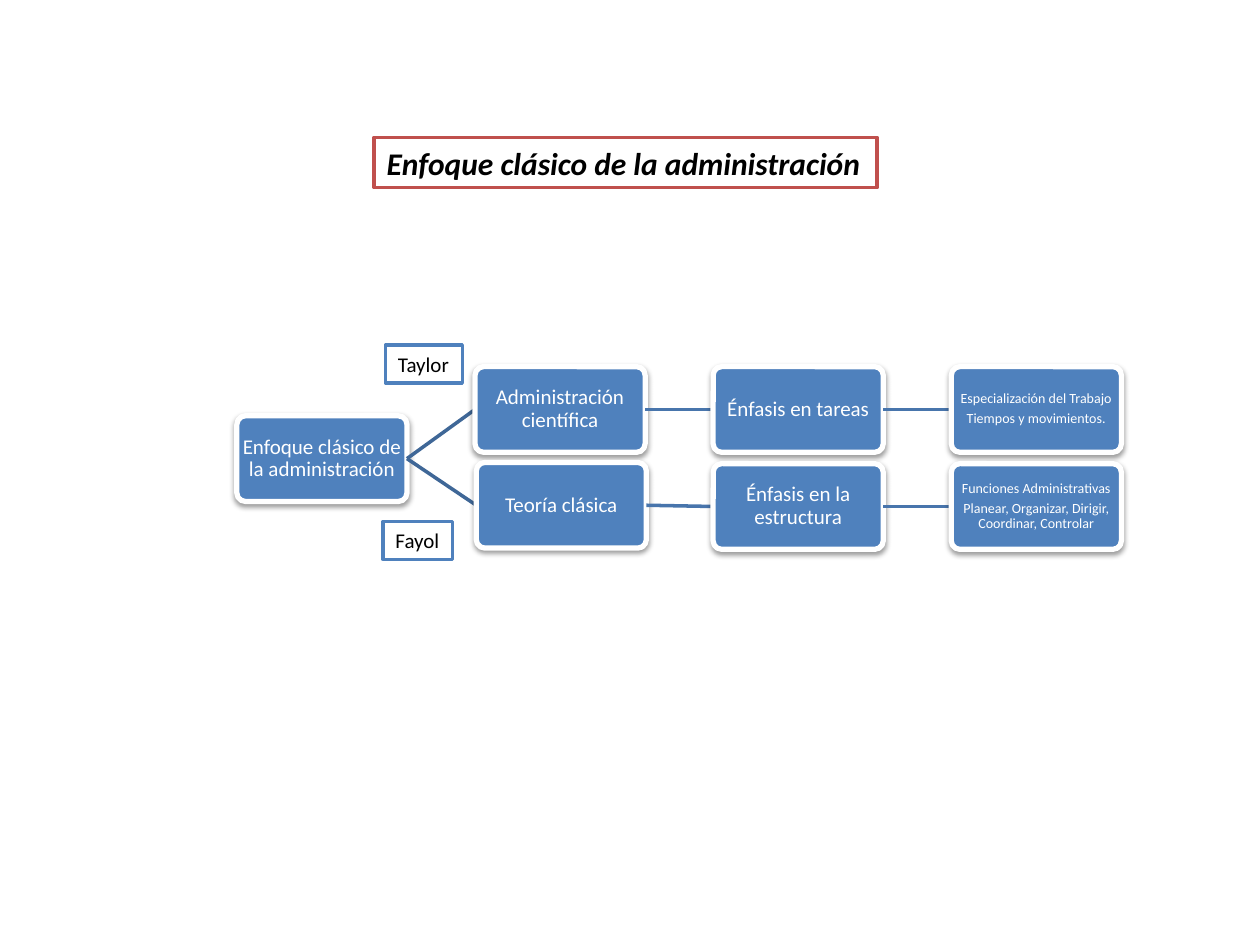
from dataclasses import dataclass

from pptx import Presentation
from pptx.dml.color import RGBColor as Rgb
from pptx.enum.shapes import MSO_CONNECTOR as Connector, MSO_SHAPE as Shape
from pptx.enum.text import MSO_ANCHOR as Anchor, MSO_AUTO_SIZE as AutoSize, PP_ALIGN as Align
from pptx.oxml import parse_xml
from pptx.oxml.ns import nsdecls
from pptx.shapes.autoshape import Shape as AutoShape
from pptx.slide import Slide
from pptx.util import Inches, Pt


@dataclass(frozen=True)
class Theme:
    font: str = "Calibri"
    blue: Rgb = Rgb(0x4F, 0x81, 0xBD)
    red: Rgb = Rgb(0xC0, 0x50, 0x4D)
    white: Rgb = Rgb(0xFF, 0xFF, 0xFF)
    black: Rgb = Rgb(0, 0, 0)
    branch: Rgb = Rgb(0x3F, 0x67, 0x97)
    link: Rgb = Rgb(0x48, 0x75, 0xAC)
    title_size: int = 18
    body_size: int = 12
    detail_size: int = 8
    line_width: int = 2
    border_width: int = 3


@dataclass(frozen=True)
class Node:
    text: str
    column: int
    top: float
    nudge: float = 0
    size: int = Theme.body_size


@dataclass(frozen=True)
class Label:
    text: str
    left: float
    top: float
    width: float
    height: float = 0.3
    line: Rgb = Theme.blue
    size: int = Theme.body_size
    emphasis: bool = False


THEME = Theme()
FIRST_LEFT, COLUMN_STEP = 1.88, 1.89
NODE_WIDTH, NODE_HEIGHT = 1.35, 0.68

ROOT = Node("Enfoque clásico de la administración", 0, 3.3)
BRANCHES = [
    [
        Node("Administración científica", 1, 2.91),
        Node("Énfasis en tareas", 2, 2.91),
        Node("Especialización del Trabajo\nTiempos y movimientos.", 3, 2.91,
             size=THEME.detail_size),
    ],
    [
        Node("Teoría clásica", 1, 3.67, nudge=0.01),
        Node("Énfasis en la estructura", 2, 3.68),
        Node("Funciones Administrativas\nPlanear, Organizar, Dirigir, Coordinar, Controlar",
             3, 3.68, size=THEME.detail_size),
    ],
]
LABELS = [
    Label("Taylor", 3.06, 2.74, 0.61),
    Label("Fayol", 3.04, 4.14, 0.55),
    Label("Enfoque clásico de la administración", 2.97, 1.09, 3.99, 0.4,
          THEME.red, THEME.title_size, True),
]


def paint(box: AutoShape, fill: Rgb, line: Rgb, width: int) -> None:
    box.shadow.inherit = False
    box.fill.solid()
    box.fill.fore_color.rgb = fill
    box.line.color.rgb = line
    box.line.width = Pt(width)


def write(box: AutoShape, text: str, size: int, color: Rgb, align: Align) -> None:
    box.text_frame.text = text
    for para in box.text_frame.paragraphs:
        para.alignment = align
        for span in para.runs:
            span.font.name = THEME.font
            span.font.size = Pt(size)
            span.font.color.rgb = color


def add_soft_shadow(box: AutoShape) -> None:
    effects = box._element.spPr.find("{*}effectLst")
    effects.append(parse_xml(
        f'<a:outerShdw {nsdecls("a")} blurRad="{Pt(3.1)}" dist="{Pt(1.6)}" '
        'dir="5400000" rotWithShape="0"><a:srgbClr val="000000">'
        '<a:alpha val="38000"/></a:srgbClr></a:outerShdw>'
    ))


def draw_node(page: Slide, node: Node) -> AutoShape:
    left = FIRST_LEFT + node.column * COLUMN_STEP + node.nudge
    box = page.shapes.add_shape(
        Shape.ROUNDED_RECTANGLE, Inches(left), Inches(node.top),
        Inches(NODE_WIDTH), Inches(NODE_HEIGHT))
    box.adjustments[0] = 0.1
    paint(box, THEME.blue, THEME.white, THEME.border_width)
    add_soft_shadow(box)
    frame = box.text_frame
    frame.word_wrap = True
    frame.vertical_anchor = Anchor.MIDDLE
    frame.margin_left = frame.margin_right = Inches(0.01)
    frame.margin_top = frame.margin_bottom = Inches(0.01)
    write(box, node.text, node.size, THEME.white, Align.CENTER)
    for para in frame.paragraphs:
        para.line_spacing = 0.9
        para.space_after = Pt(0.35 * node.size)
    return box


def join(page: Slide, parent: AutoShape, child: AutoShape, color: Rgb) -> None:
    line = page.shapes.add_connector(Connector.STRAIGHT, 0, 0, 0, 0)
    line.begin_connect(parent, 3)
    line.end_connect(child, 1)
    line.line.color.rgb = color
    line.line.width = Pt(THEME.line_width)
    line._element.spPr.append(parse_xml(f'<a:effectLst {nsdecls("a")}/>'))
    child._element.addprevious(line._element)


def draw_label(page: Slide, label: Label) -> None:
    box = page.shapes.add_shape(
        Shape.RECTANGLE, Inches(label.left), Inches(label.top),
        Inches(label.width), Inches(label.height))
    paint(box, THEME.white, label.line, THEME.line_width)
    frame = box.text_frame
    frame.word_wrap = False
    frame.auto_size = AutoSize.SHAPE_TO_FIT_TEXT
    frame.vertical_anchor = Anchor.TOP
    write(box, label.text, label.size, THEME.black, Align.LEFT)
    for span in frame.paragraphs[0].runs:
        span.font.bold = span.font.italic = label.emphasis


def main() -> None:
    deck = Presentation()
    deck.slide_width, deck.slide_height = Inches(10), Inches(7.5)
    page = deck.slides.add_slide(deck.slide_layouts[6])
    root = draw_node(page, ROOT)
    for branch in BRANCHES:
        parent = root
        for node in branch:
            child = draw_node(page, node)
            join(page, parent, child, THEME.branch if parent is root else THEME.link)
            parent = child
    for label in LABELS:
        draw_label(page, label)
    deck.save("out.pptx")


if __name__ == "__main__":
    main()
